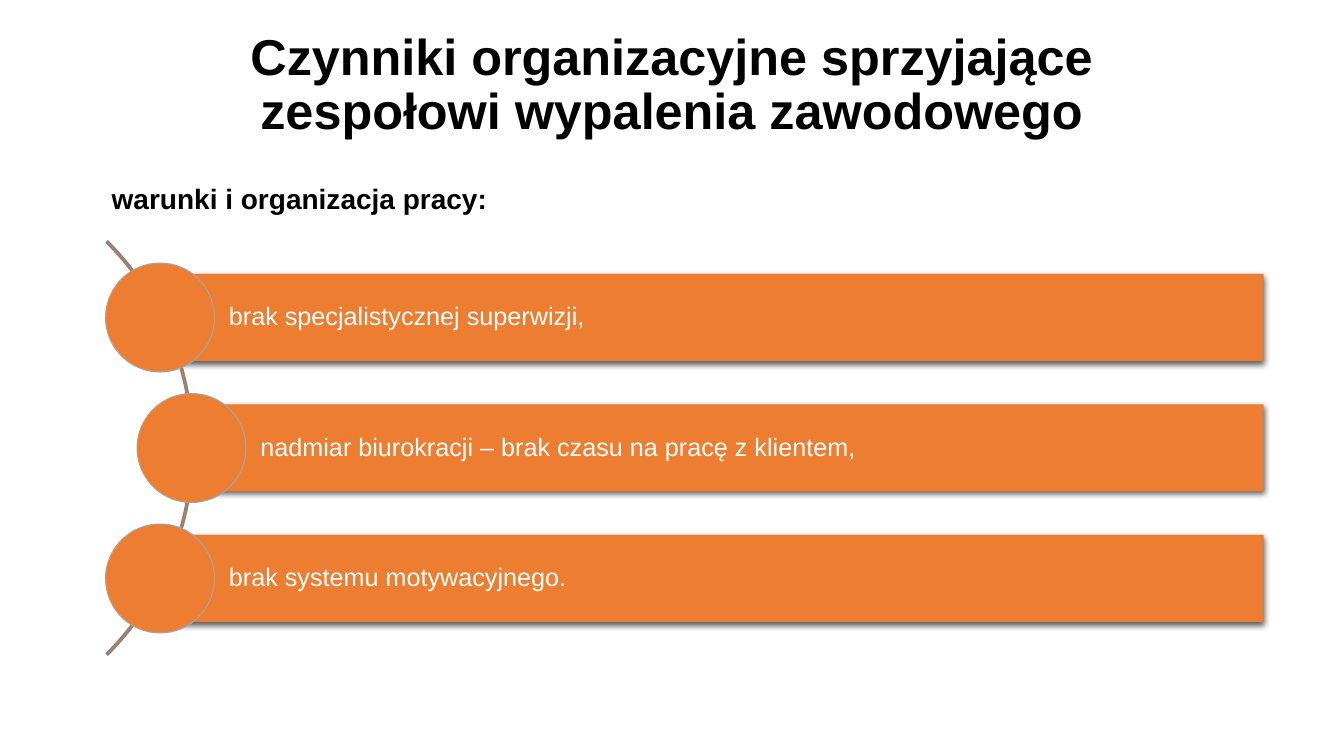
from lxml.etree import SubElement
from pptx import Presentation
from pptx.dml.color import RGBColor
from pptx.enum.shapes import MSO_SHAPE
from pptx.enum.text import MSO_ANCHOR, PP_ALIGN
from pptx.oxml.ns import qn
from pptx.util import Pt

ORANGE = RGBColor(0xED, 0x7D, 0x31)
GRAY = RGBColor(0xA5, 0xA5, 0xA5)
DARK = RGBColor(0x82, 0x82, 0x82)
BLACK = RGBColor(0, 0, 0)
WHITE = RGBColor(0xFF, 0xFF, 0xFF)

TITLE = ["Czynniki organizacyjne sprzyjające", "zespołowi wypalenia zawodowego"]
HEAD = "warunki i organizacja pracy:"
# Each factor with the x of its circle's centre
ROWS = [
    ("brak specjalistycznej superwizji,", 114.3),
    ("nadmiar biurokracji – brak czasu na pracę z klientem,", 136.8),
    ("brak systemu motywacyjnego.", 114.3),
]
MID, STEP = 320, 93.2
RIGHT, TALL = 902.6, 62.2
DISC, ARC = 77.8, 418.3


class Deck:
    font = "Arial"

    def __init__(self, slide):
        self.slide = slide

    def label(self, frame, lines, size, color, bold=False, align=PP_ALIGN.LEFT):
        frame.word_wrap = True
        para = frame.paragraphs[0]
        para.alignment = align
        para.line_spacing = 0.9
        for i, line in enumerate(lines):
            if i:
                para.add_line_break()
            run = para.add_run()
            run.text = line
            font = run.font
            font.name, font.size, font.bold = self.font, Pt(size), bold
            font.color.rgb = color

    def text(self, x, y, w, h, lines, size, anchor=MSO_ANCHOR.TOP, align=PP_ALIGN.LEFT):
        box = self.slide.shapes.add_textbox(Pt(x), Pt(y), Pt(w), Pt(h))
        box.text_frame.vertical_anchor = anchor
        self.label(box.text_frame, lines, size, BLACK, True, align)

    def shape(self, kind, x, y, w, h, line=None, width=1):
        item = self.slide.shapes.add_shape(kind, Pt(x), Pt(y), Pt(w), Pt(h))
        item.shadow.inherit = False
        item.fill.solid()
        item.fill.fore_color.rgb = ORANGE
        if line is None:
            item.line.fill.background()
        else:
            item.line.color.rgb = line
            item.line.width = Pt(width)
        return item

    def shade(self, item):
        """Give the shape a soft shadow straight below it."""
        effects = item.element.spPr.find(qn("a:effectLst"))
        outer = SubElement(effects, qn("a:outerShdw"), blurRad=str(Pt(4.5)),
                           dist=str(Pt(1.5)), dir="5400000", algn="ctr", rotWithShape="0")
        color = SubElement(outer, qn("a:srgbClr"), val=str(BLACK))
        SubElement(color, qn("a:alpha"), val="63000")

    def arc(self, x, y, size):
        item = self.shape(MSO_SHAPE.BLOCK_ARC, x, y, size, size, DARK)
        for i, value in enumerate((189, 27, 0.004)):
            item.adjustments[i] = value

    def bar(self, x, mid, words):
        item = self.shape(MSO_SHAPE.RECTANGLE, x, mid - TALL / 2, RIGHT - x, TALL)
        self.shade(item)
        frame = item.text_frame
        frame.vertical_anchor = MSO_ANCHOR.MIDDLE
        frame.margin_left = Pt(49.2)
        frame.margin_right = frame.margin_top = frame.margin_bottom = Pt(6.5)
        self.label(frame, [words], 18, WHITE)

    def disc(self, x, mid):
        self.shape(MSO_SHAPE.OVAL, x - DISC / 2, mid - DISC / 2, DISC, DISC, GRAY, 0.75)


def main():
    show = Presentation()
    show.slide_width, show.slide_height = Pt(960), Pt(540)
    deck = Deck(show.slides.add_slide(show.slide_layouts[6]))
    deck.text(66, 20, 828, 83.5, TITLE, 36, MSO_ANCHOR.MIDDLE, PP_ALIGN.CENTER)
    deck.arc(-280, MID - ARC / 2, ARC)
    for i, (words, x) in enumerate(ROWS):
        mid = MID + (i - 1) * STEP
        deck.bar(x, mid, words)
        deck.disc(x, mid)
    deck.text(72.7, 129, 835, 47.5, [HEAD], 20)
    show.save("out.pptx")


if __name__ == "__main__":
    main()
